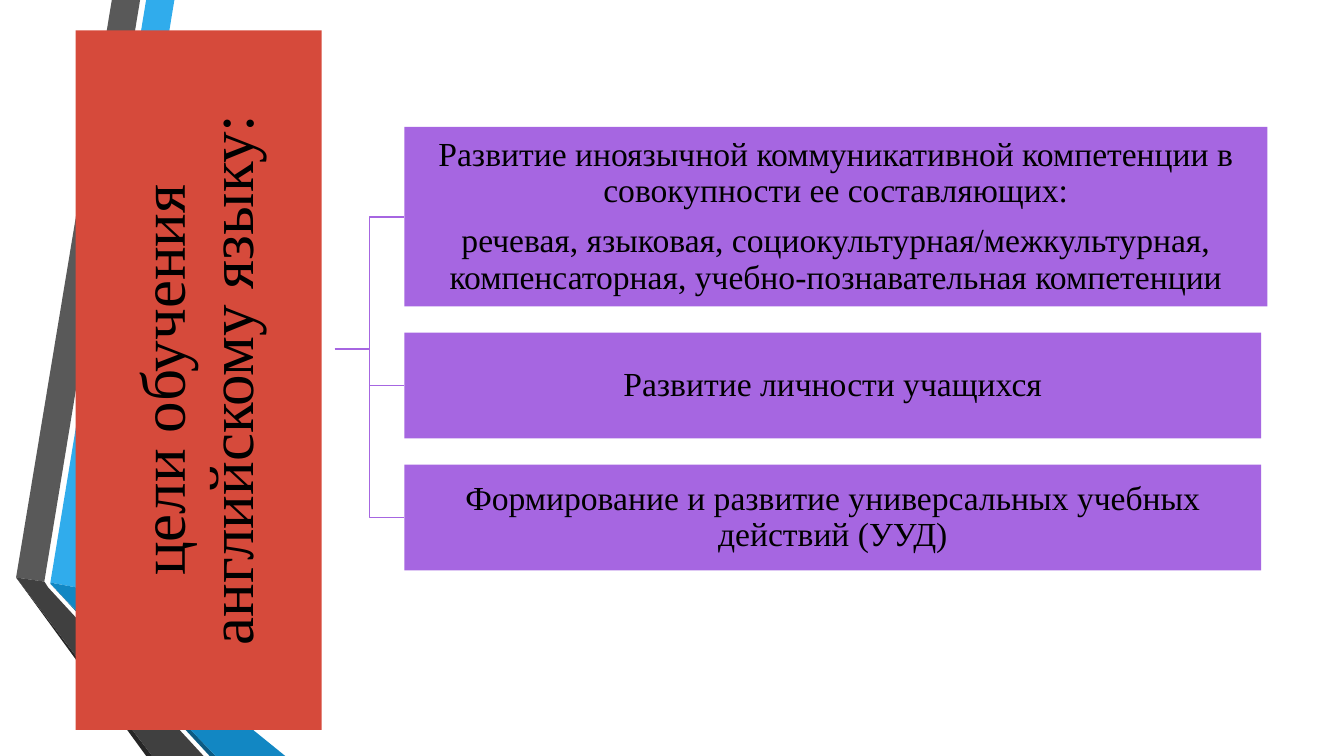
from dataclasses import dataclass

from lxml import etree
from pptx import Presentation
from pptx.dml.color import RGBColor
from pptx.enum.shapes import MSO_CONNECTOR, MSO_SHAPE
from pptx.enum.text import MSO_ANCHOR, PP_ALIGN
from pptx.oxml.ns import qn
from pptx.shapes.autoshape import Shape
from pptx.slide import Slide
from pptx.util import Inches, Pt

RECTANGLE = MSO_SHAPE.RECTANGLE
ELBOW = MSO_CONNECTOR.ELBOW
MIDDLE = MSO_ANCHOR.MIDDLE
CENTER = PP_ALIGN.CENTER
FONT = "Times New Roman"
COLORS = {
    "sky": "30ACEC", "blue": "1287C3", "navy": "0C5A82",
    "gray": "595959", "dark": "404040", "black": "262626",
    "red": "D64A3B", "purple": "A666E1", "text": "000000",
}
GOAL_LEFT = 4.01
BRANCH_START = (3.32, 3.46)


@dataclass
class Ribbon:
    color: str
    points: list[tuple[float, float]]


@dataclass
class Panel:
    left: float
    top: float
    width: float
    height: float
    color: str
    paragraphs: list[str]
    size: float = 24
    space_after: float = 10
    inset: float = 0.02
    rotation: float = 0


RIBBONS = [
    Ribbon("sky", [(0.5, 5.78), (0.77, 5.83), (1.73, 0), (1.45, 0)]),
    Ribbon("gray", [(1.39, 0), (1.11, 0), (0.16, 5.73), (0.44, 5.77)]),
    Ribbon("black", [(0.16, 5.73), (1.45, 7.5), (1.51, 7.5)]),
    Ribbon("navy", [(0.5, 5.79), (2.08, 7.5), (2.14, 7.5)]),
    Ribbon("blue", [(0.5, 5.79), (2.14, 7.5), (2.83, 7.5), (0.77, 5.83), (0.5, 5.78)]),
    Ribbon("dark", [(2.02, 7.5), (0.48, 5.83), (0.44, 5.77), (0.16, 5.73), (1.51, 7.5)]),
]
TITLE = Panel(-1.5, 2.55, 6.94, 2.44, "red", ["цели обучения английскому языку:"],
              size=45, space_after=19, inset=0.03, rotation=270)
GOALS = [
    Panel(GOAL_LEFT, 1.26, 8.56, 1.78, "purple", [
        "Развитие иноязычной коммуникативной компетенции в совокупности ее составляющих:",
        "речевая, языковая, социокультурная/межкультурная, компенсаторная, "
        "учебно-познавательная компетенции",
    ]),
    Panel(GOAL_LEFT, 3.3, 8.5, 1.05, "purple", ["Развитие личности учащихся"]),
    Panel(GOAL_LEFT, 4.61, 8.5, 1.05, "purple",
          ["Формирование и развитие универсальных учебных действий (УУД)"]),
]


def rgb(name: str) -> RGBColor:
    return RGBColor.from_string(COLORS[name])


def paint(sp: Shape, color: str) -> None:
    sp.shadow.inherit = False
    sp.fill.solid()
    sp.fill.fore_color.rgb = rgb(color)
    sp.line.fill.background()


def add_ribbon(s: Slide, ribbon: Ribbon) -> None:
    points = [(Inches(x), Inches(y)) for x, y in ribbon.points]
    builder = s.shapes.build_freeform(*points[0])
    builder.add_line_segments(points[1:], close=True)
    paint(builder.convert_to_shape(), ribbon.color)


def add_branch(s: Slide, goal: Panel) -> None:
    x, y = BRANCH_START
    line = s.shapes.add_connector(ELBOW, Inches(x), Inches(y), Inches(goal.left),
                                  Inches(goal.top + goal.height / 2))
    line.line.color.rgb = rgb("purple")
    line.line.width = Pt(1.25)
    etree.SubElement(line._element.spPr, qn("a:effectLst"))


def add_panel(s: Slide, panel: Panel) -> None:
    sp = s.shapes.add_shape(RECTANGLE, Inches(panel.left), Inches(panel.top),
                            Inches(panel.width), Inches(panel.height))
    paint(sp, panel.color)
    sp.rotation = panel.rotation
    tf = sp.text_frame
    tf.word_wrap = True
    tf.vertical_anchor = MIDDLE
    tf.margin_left = tf.margin_right = Inches(panel.inset)
    tf.margin_top = tf.margin_bottom = Inches(panel.inset)
    for i, text in enumerate(panel.paragraphs):
        p = tf.add_paragraph() if i else tf.paragraphs[0]
        p.alignment = CENTER
        p.line_spacing = 0.9
        p.space_after = Pt(panel.space_after)
        r = p.add_run()
        r.text = text
        r.font.name = FONT
        r.font.size = Pt(panel.size)
        r.font.color.rgb = rgb("text")


def main() -> None:
    """Build the slide of goals for teaching English."""
    prs = Presentation()
    prs.slide_width, prs.slide_height = Inches(13.33), Inches(7.5)
    s = prs.slides.add_slide(prs.slide_layouts[6])
    for ribbon in RIBBONS:
        add_ribbon(s, ribbon)
    for goal in reversed(GOALS):
        add_branch(s, goal)
    for panel in [TITLE, *GOALS]:
        add_panel(s, panel)
    prs.save("out.pptx")


if __name__ == "__main__":
    main()
